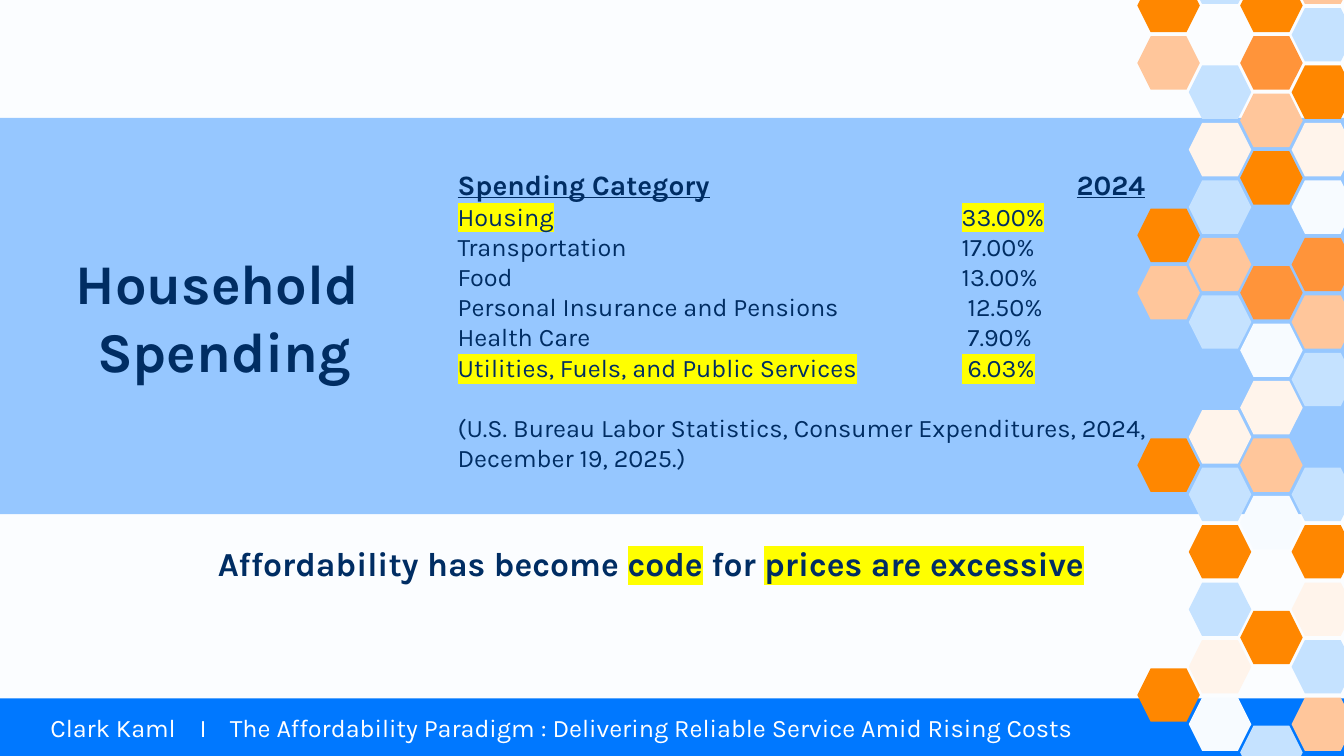
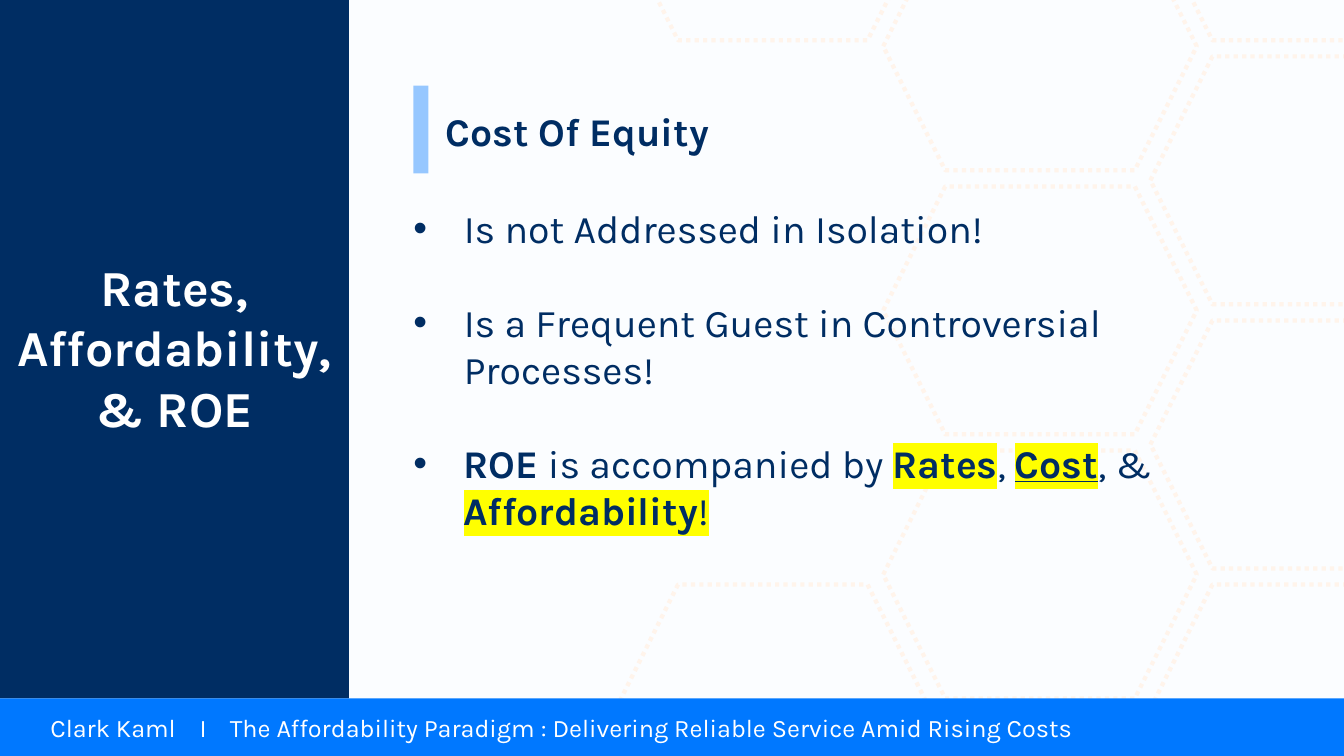
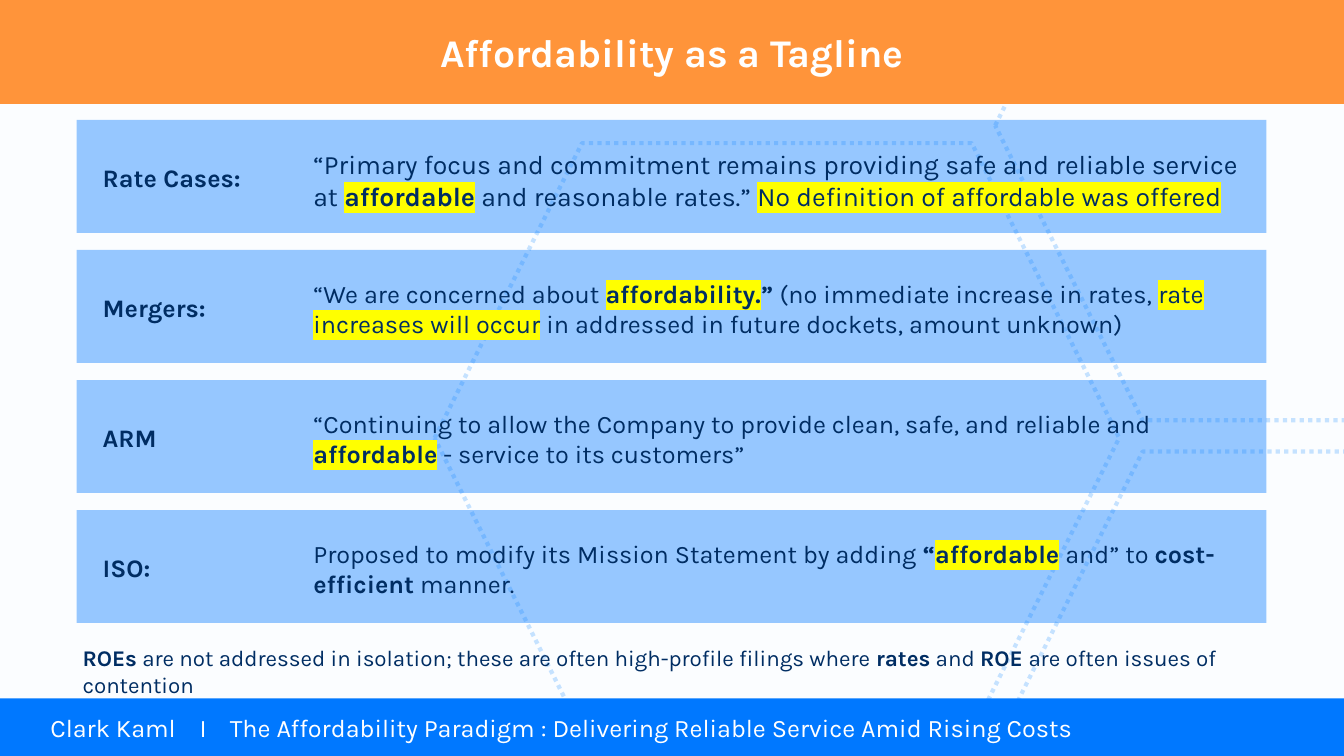
from collections import namedtuple
from dataclasses import dataclass

from lxml import etree
from pptx import Presentation
from pptx import util as u
from pptx.dml.color import RGBColor
from pptx.enum import dml, shapes, text
from pptx.oxml import ns


# ---- Theme: colours, type sizes and shared measures ----
@dataclass(frozen=True)
class Theme:
    font: str = "Karla"
    paper: str = "FBFDFF"
    white: str = "FFFFFF"
    navy: str = "002D63"
    blue: str = "0078FF"
    orange: str = "FF943A"
    marker: str = "FFFF00"
    band_alpha: int = 40
    title: int = 40
    panel_title: int = 36
    heading: int = 28
    callout: int = 24
    table_head: int = 20
    lead: int = 19
    body: int = 18
    note: int = 16


THEME = Theme()
HEXAGON_COLORS = {"O": "FF8700", "A": "FF943A", "P": "FFC69B",
                  "C": "FFF4EB", "S": "C5E2FF", "W": "F7FBFF"}
Box = namedtuple("Box", "left top width height")
PAGE = Box(0, 0, 13.33, 7.5)
FOOTER = Box(0, 6.93, PAGE.width, 0.57)
CENTER, MIDDLE = text.PP_ALIGN.CENTER, text.MSO_ANCHOR.MIDDLE


# ---- Basic parts ----
def inches(box):
    return [u.Inches(value) for value in box]


def within(box, left, top, width, height):
    """Box whose offset is measured from the corner of another box."""
    return Box(box.left + left, box.top + top, width, height)


def paint(shape, color, alpha=None):
    shape.fill.solid()
    shape.fill.fore_color.rgb = RGBColor.from_string(color)
    if alpha is not None:
        color_element = shape._element.spPr.find(ns.qn("a:solidFill"))[0]
        etree.SubElement(color_element, ns.qn("a:alpha"), val=str(alpha * 1000))


def add_block(slide, box, color, alpha=None):
    block = slide.shapes.add_shape(shapes.MSO_SHAPE.RECTANGLE, *inches(box))
    block.shadow.inherit = False
    block.line.fill.background()
    paint(block, color, alpha)
    return block


def add_band(slide, box):
    return add_block(slide, box, THEME.blue, THEME.band_alpha)


def bring_placeholder(slide, index, box):
    """Move a placeholder into the box and in front of what is drawn so far."""
    placeholder = slide.placeholders[index]
    placeholder.left, placeholder.top, placeholder.width, placeholder.height = inches(box)
    slide.shapes._spTree.append(placeholder._element)
    return placeholder


def format_list(paragraph, bullet, tabs):
    properties = paragraph._p.get_or_add_pPr()
    if bullet:
        indent = u.Inches(0.5)
        properties.set("marL", str(indent))
        properties.set("indent", str(-indent))
        etree.SubElement(properties, ns.qn("a:buChar"), char=bullet)
    if tabs:
        tab_list = etree.SubElement(properties, ns.qn("a:tabLst"))
        for position in tabs:
            etree.SubElement(tab_list, ns.qn("a:tab"),
                             pos=str(u.Inches(position)), algn="l")


def add_run(paragraph, content, flags=""):
    """Flags: b bold, u underlined, h highlighted."""
    run = paragraph.add_run()
    run.text = content
    if "b" in flags:
        run.font.bold = True
    if "u" in flags:
        run.font.underline = True
    if "h" in flags:
        highlight = etree.SubElement(run._r.get_or_add_rPr(), ns.qn("a:highlight"))
        etree.SubElement(highlight, ns.qn("a:srgbClr"), val=THEME.marker)


def write(shape, paragraphs, size, color=THEME.navy, bold=False, align=text.PP_ALIGN.LEFT,
          anchor=text.MSO_ANCHOR.TOP, gap=0, bullet=None, tabs=()):
    """Each paragraph is a list of runs: plain strings or (text, flags)."""
    frame = shape.text_frame
    frame.word_wrap = True
    frame.auto_size = text.MSO_AUTO_SIZE.NONE
    frame.vertical_anchor = anchor
    for number, runs in enumerate(paragraphs):
        paragraph = frame.add_paragraph() if number else frame.paragraphs[0]
        format_list(paragraph, bullet, tabs)
        paragraph.alignment = align
        paragraph.space_before = u.Pt(gap if number else 0)
        paragraph.font.name = THEME.font
        paragraph.font.size = u.Pt(size)
        paragraph.font.bold = bold
        paragraph.font.color.rgb = RGBColor.from_string(color)
        for run in runs:
            add_run(paragraph, *([run] if isinstance(run, str) else run))
    return frame


def add_text(slide, box, paragraphs, size, **style):
    return write(slide.shapes.add_textbox(*inches(box)), paragraphs, size, **style)


# ---- Shared regions ----
def add_footer(slide):
    bar = add_block(slide, FOOTER, THEME.blue)
    bar.text_frame.margin_left = u.Inches(0.5)
    write(bar, [["Clark Kaml\tI\tThe Affordability Paradigm : "
                 "Delivering Reliable Service Amid Rising Costs"]],
          THEME.body, THEME.white, anchor=MIDDLE, tabs=(1.48, 1.78))


def add_honeycomb(slide, columns, left, tops, cell, pitch, outlined=True):
    """Columns of colour letters; the two tops alternate, a dot skips a cell."""
    for column, letters in enumerate(columns):
        for row, letter in enumerate(letters):
            if letter == ".":
                continue
            box = Box(left + column * pitch[0], tops[column % 2] + row * pitch[1], *cell)
            hexagon = slide.shapes.add_shape(shapes.MSO_SHAPE.HEXAGON, *inches(box))
            hexagon.shadow.inherit = False
            if outlined:
                hexagon.fill.background()
                hexagon.line.color.rgb = RGBColor.from_string(HEXAGON_COLORS[letter])
                hexagon.line.width = u.Pt(3)
                hexagon.line.dash_style = dml.MSO_LINE.ROUND_DOT
            else:
                paint(hexagon, HEXAGON_COLORS[letter])
                hexagon.line.fill.background()


def add_title_panel(slide, box, title, size, color):
    panel = bring_placeholder(slide, 0, box)
    paint(panel, color)
    write(panel, [[title]], size, THEME.white, bold=True, align=CENTER, anchor=MIDDLE)


# ---- Slide 1: household spending ----
def add_spending_list(slide, box):
    rows = [("Housing", "33.00%", "h"), ("Transportation", "17.00%", ""),
            ("Food", "13.00%", ""), ("Personal Insurance and Pensions", " 12.50%", ""),
            ("Health Care", " 7.90%", ""),
            ("Utilities, Fuels, and Public Services", " 6.03%", "h")]
    paragraphs = [[("Spending Category", "bu"), "\t\t", ("2024", "bu")]]
    paragraphs += [[(name, flags), "\t", (share, flags)] for name, share, flags in rows]
    paragraphs.append(["(U.S. Bureau Labor Statistics, Consumer Expenditures, 2024, "
                       "December 19, 2025.)"])
    frame = add_text(slide, box, paragraphs, THEME.body, tabs=(5, 6.14))
    frame.paragraphs[0].font.size = u.Pt(THEME.table_head)
    frame.paragraphs[-1].space_before = u.Pt(21.6)


def build_spending(slide):
    band = Box(0, 1.17, PAGE.width, 3.93)
    add_band(slide, band)
    add_footer(slide)
    add_text(slide, Box(0.83, 5.34, 11.25, 0.5),
             [["Affordability has become ", ("code", "h"), " for ",
               ("prices are excessive", "h")]],
             THEME.callout, bold=True, align=CENTER)
    add_spending_list(slide, within(band, 4.44, 0.44, 7.51, 3.16))
    add_honeycomb(slide, ["OP..OP..O...O", "S.SCSPS.CSOSCW",
                          "OAPO.AWCPW.O.S", "PSOCWAPS.SOCSP"],
                  11.28, (-0.21, -0.49), (0.62, 0.53), (0.51, 0.57), outlined=False)
    title = bring_placeholder(slide, 0, within(band, -0.32, 1.25, 5.09, 1.45))
    write(title, [["Household "], ["Spending"]], THEME.title, bold=True, align=CENTER)


# ---- Slide 2: rates, affordability and ROE ----
def add_heading(slide, box, heading):
    add_band(slide, within(box, 0, 0, 0.15, box.height))
    add_text(slide, within(box, 0.22, 0.17, box.width - 0.22, 0.57), [[heading]],
             THEME.heading, bold=True)


def build_equity(slide):
    add_honeycomb(slide, ["C..C", "CCC", "CCCC"], 6.11, (-2.06, -0.77),
                  (3.11, 2.46), (2.65, 2.62))
    add_title_panel(slide, Box(0, -0.05, 3.46, FOOTER.top + 0.05),
                    "Rates, Affordability, & ROE", THEME.panel_title, THEME.navy)
    add_footer(slide)
    add_heading(slide, Box(4.1, 0.85, 8.6, 0.87), "Cost Of Equity")
    points = [
        ["Is not Addressed in Isolation!"],
        ["Is a Frequent Guest in Controversial Processes!"],
        [("ROE", "b"), " is accompanied by ", ("Rates", "bh"), ", ", ("Cost", "buh"),
         ", & ", ("Affordability", "bh"), ("!", "h")],
    ]
    write(bring_placeholder(slide, 1, Box(4, 1.98, 8.63, 3.3)), points,
          THEME.heading, gap=33.5, bullet="•")


# ---- Slide 3: affordability as a tagline ----
def add_statement(slide, box, label, runs, size):
    add_band(slide, box)
    add_text(slide, within(box, 2.25, 0.23, 9.4, 0.74), [runs], size)
    add_text(slide, within(box, 0.16, 0.37, 1.82, 0.4), [[label]], THEME.body, bold=True)


def build_tagline(slide):
    add_honeycomb(slide, ["S", "SS"], 4.31, (1.42, -1.68), (6.79, 5.85), (5.56, 6.16))
    add_title_panel(slide, Box(0, 0, PAGE.width, 1.03),
                    "Affordability as a Tagline", THEME.heading, THEME.orange)
    add_footer(slide)
    statements = [
        ("Rate Cases:", THEME.lead,
         ["“Primary focus and commitment remains providing safe and reliable service at ",
          ("affordable", "bh"), " and reasonable rates.” ",
          ("No definition of affordable was offered", "h")]),
        ("Mergers:", THEME.body,
         ["“We are concerned about ", ("affordability.", "bh"), ("” ", "b"),
          "(no immediate increase in rates, ", ("rate increases will occur", "h"),
          " in addressed in future dockets, amount unknown)"]),
        ("ARM", THEME.body,
         ["“Continuing to allow the Company to provide clean, safe, and reliable and ",
          ("affordable", "bh"), " - service to its customers”"]),
        ("ISO:", THEME.body,
         ["Proposed to modify its Mission Statement by adding ", ("“", "b"),
          ("affordable", "bh"), " and” to ", ("cost-efficient", "b"), " manner."]),
    ]
    for row, (label, size, runs) in enumerate(statements):
        add_statement(slide, Box(0.76, 1.19 + row * 1.29, 11.8, 1.12), label, runs, size)
    add_text(slide, Box(0.72, 6.34, 11.89, 0.58),
             [[("ROEs", "b"), " are not addressed in isolation; these are often "
               "high-profile filings where ", ("rates", "b"), " and ", ("ROE ", "b"),
               "are often issues of contention"]], THEME.note)


def main():
    presentation = Presentation()
    presentation.slide_width = u.Inches(PAGE.width)
    presentation.slide_height = u.Inches(PAGE.height)
    backdrop = presentation.slide_master.background.fill
    backdrop.solid()
    backdrop.fore_color.rgb = RGBColor.from_string(THEME.paper)
    title_and_content, title_only = (presentation.slide_layouts[i] for i in (1, 5))
    for layout, build in ((title_only, build_spending),
                          (title_and_content, build_equity),
                          (title_only, build_tagline)):
        build(presentation.slides.add_slide(layout))
    presentation.save("out.pptx")


if __name__ == "__main__":
    main()
